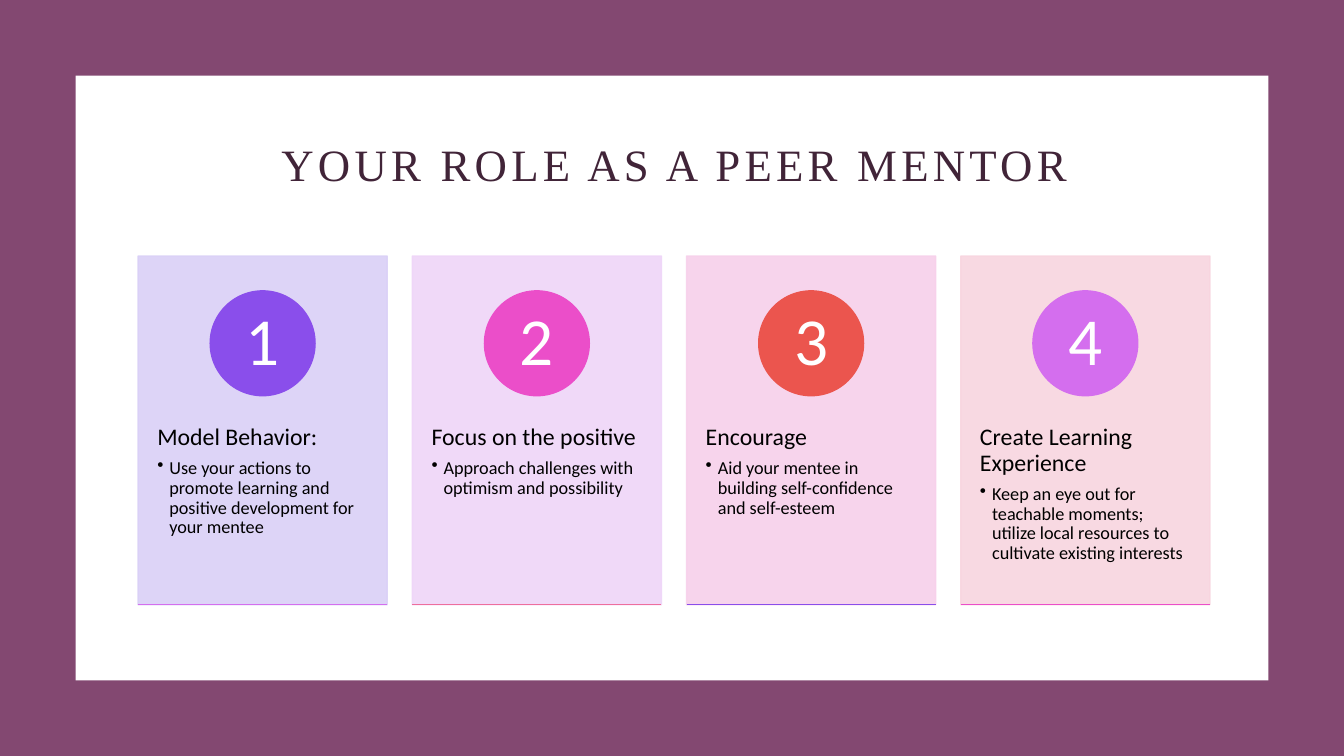
from lxml import etree
from pptx import Presentation
from pptx.dml.color import RGBColor
from pptx.enum.shapes import MSO_CONNECTOR, MSO_SHAPE
from pptx.enum.text import MSO_ANCHOR, PP_ALIGN
from pptx.oxml.ns import qn
from pptx.util import Inches, Pt

RECT, OVAL = MSO_SHAPE.RECTANGLE, MSO_SHAPE.OVAL
STRAIGHT = MSO_CONNECTOR.STRAIGHT
MIDDLE, TOP = MSO_ANCHOR.MIDDLE, MSO_ANCHOR.TOP
LEFT, CENTER = PP_ALIGN.LEFT, PP_ALIGN.CENTER

TITLE = "YOUR ROLE AS A PEER MENTOR"
# heading, advice, card colour, circle colour, base line colour
ROLES = [
    ("Model Behavior:",
     "Use your actions to promote learning and positive development for your mentee",
     "lavender", "violet", "orchid"),
    ("Focus on the positive",
     "Approach challenges with optimism and possibility",
     "lilac", "pink", "rose"),
    ("Encourage",
     "Aid your mentee in building self-confidence and self-esteem",
     "blush", "violet_red", "violet"),
    ("Create Learning Experience",
     "Keep an eye out for teachable moments; utilize local resources to "
     "cultivate existing interests",
     "shell", "orchid", "pink"),
]
COLORS = {
    "plum": "834871", "white": "FFFFFF", "black": "000000", "title": "412438",
    "lavender": "DAD0F7", "lilac": "EFD5F8", "blush": "F7D0EB", "shell": "F8D5DF",
    "violet": "8A4EEB", "pink": "EB4EC9", "violet_red": "EB554E",
    "orchid": "D46EEE", "rose": "EE6E9D",
}
TITLE_FONT, BODY_FONT = "Times New Roman", "Calibri"

SLIDE_W, SLIDE_H = 13.33, 7.5
FRAME = 0.75
CARD_X, CARD_Y, CARD_W, CARD_H = 1.37, 2.54, 2.47, 3.46
CARD_STEP = 2.72
CIRCLE = 1.04
CIRCLE_Y = CARD_Y + CARD_H * 0.1
TEXT_Y, TEXT_H = CARD_Y + CARD_H * 0.38, CARD_H * 0.6


def color(name):
    return RGBColor.from_string(COLORS[name])


def add_block(slide, kind, x, y, w, h, fill, line=False):
    s = slide.shapes.add_shape(kind, Inches(x), Inches(y), Inches(w), Inches(h))
    s.shadow.inherit = False
    s.fill.solid()
    s.fill.fore_color.rgb = color(fill)
    if line:
        s.line.color.rgb = color(fill)
        s.line.width = Pt(1)
    else:
        s.line.fill.background()
    return s


def set_opacity(s, percent):
    """Make the fill and the outline of a shape partly see-through."""
    for clr in s._element.spPr.iter(qn("a:srgbClr")):
        etree.SubElement(clr, qn("a:alpha")).set("val", str(percent * 1000))


def set_frame(tf, anchor, side, end):
    tf.word_wrap = True
    tf.vertical_anchor = anchor
    tf.margin_left = tf.margin_right = Inches(side)
    tf.margin_top = tf.margin_bottom = Inches(end)


def write(p, text, size, font, clr, align=LEFT, after=0):
    p.alignment = align
    p.line_spacing = 0.9
    p.space_after = Pt(after)
    r = p.add_run()
    r.text = text
    r.font.size = Pt(size)
    r.font.name = font
    r.font.color.rgb = color(clr)
    return r


def add_bullet(p):
    pPr = p._p.get_or_add_pPr()
    pPr.set("marL", str(Inches(0.12)))
    pPr.set("indent", str(Inches(-0.12)))
    etree.SubElement(pPr, qn("a:buChar")).set("char", "•")


def add_base_line(slide, x, clr):
    y = Inches(CARD_Y + CARD_H)
    c = slide.shapes.add_connector(STRAIGHT, Inches(x), y, Inches(x + CARD_W), y)
    c.line.color.rgb = color(clr)
    c.line.width = Pt(1)
    etree.SubElement(c._element.spPr, qn("a:effectLst"))


def add_title(slide):
    title = slide.shapes.title
    slide.shapes._spTree.append(title._element)  # in front of the white panel
    title.left, title.top = Inches(1.5), Inches(1.17)
    title.width, title.height = Inches(10.38), Inches(0.98)
    tf = title.text_frame
    set_frame(tf, MIDDLE, 0.1, 0.05)
    r = write(tf.paragraphs[0], TITLE, 32, TITLE_FONT, "title", CENTER)
    r.font._element.set("spc", "300")


def add_card(slide, i, heading, advice, card, circle, base):
    x = CARD_X + i * CARD_STEP
    set_opacity(add_block(slide, RECT, x, CARD_Y, CARD_W, CARD_H, card, True), 90)

    box = slide.shapes.add_textbox(Inches(x), Inches(TEXT_Y),
                                   Inches(CARD_W), Inches(TEXT_H))
    tf = box.text_frame
    set_frame(tf, TOP, 0.19, 0.36)
    write(tf.paragraphs[0], heading, 17, BODY_FONT, "black", after=6)
    p = tf.add_paragraph()
    write(p, advice, 13, BODY_FONT, "black", after=2)
    add_bullet(p)

    s = add_block(slide, OVAL, x + (CARD_W - CIRCLE) / 2, CIRCLE_Y,
                  CIRCLE, CIRCLE, circle, True)
    set_frame(s.text_frame, MIDDLE, 0, 0)
    write(s.text_frame.paragraphs[0], str(i + 1), 48, BODY_FONT, "white", CENTER)

    add_base_line(slide, x, base)


def main():
    prs = Presentation()
    prs.slide_width, prs.slide_height = Inches(SLIDE_W), Inches(SLIDE_H)
    slide = prs.slides.add_slide(prs.slide_layouts[5])
    add_block(slide, RECT, 0, 0, SLIDE_W, SLIDE_H, "plum")
    add_block(slide, RECT, FRAME, FRAME,
              SLIDE_W - 2 * FRAME, SLIDE_H - 2 * FRAME, "white")
    add_title(slide)
    for i, role in enumerate(ROLES):
        add_card(slide, i, *role)
    prs.save("out.pptx")


if __name__ == "__main__":
    main()
